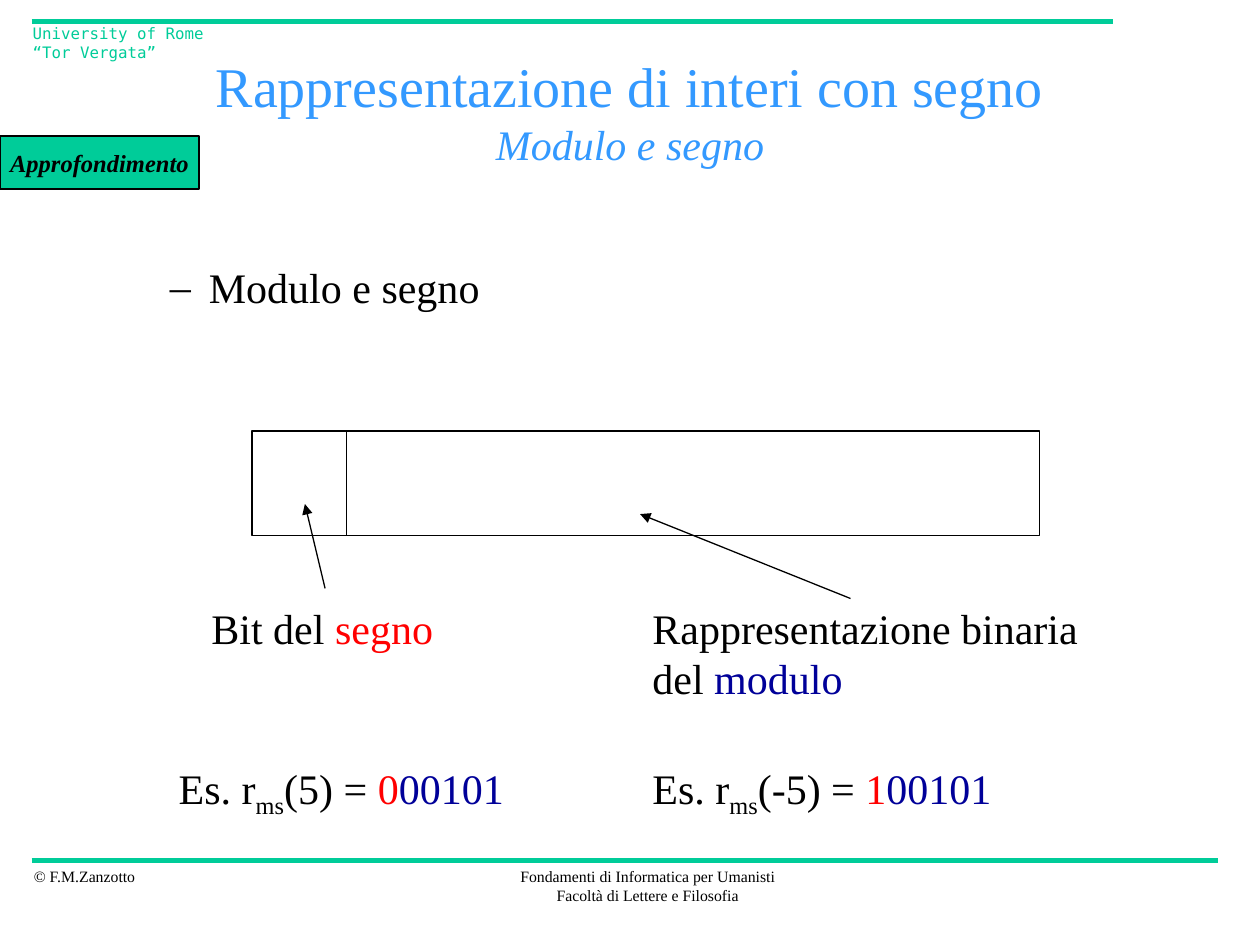
"""Build the slide on sign-and-magnitude representation of integers."""
from lxml.etree import SubElement
from pptx import Presentation
from pptx.dml.color import RGBColor
from pptx.enum.shapes import MSO_CONNECTOR as Connector, MSO_SHAPE as Shape
from pptx.enum.text import MSO_ANCHOR as Anchor, MSO_AUTO_SIZE as AutoSize, PP_ALIGN as Align
from pptx.oxml.ns import qn
from pptx.util import Inches, Pt

COLORS = {"black": "000000", "green": "00CC99", "sky": "3399FF", "red": "FF0000", "navy": "000099"}
SERIF, MONO = "Times New Roman", "DejaVu Sans Mono"


def format_run(run, size, color, font=SERIF):
    run.font.size = Pt(size)
    run.font.name = font
    run.font.color.rgb = RGBColor.from_string(COLORS[color])


def add_text(box, text, size, color="black", font=SERIF, align=Align.LEFT, wrap=False):
    frame = slide.shapes.add_textbox(*map(Inches, box)).text_frame
    frame.word_wrap = wrap
    frame.auto_size = AutoSize.NONE if wrap else AutoSize.SHAPE_TO_FIT_TEXT
    frame.text = text
    for paragraph in frame.paragraphs:
        paragraph.alignment = align
        for run in paragraph.runs:
            format_run(run, size, color, font)
    return frame


presentation = Presentation()
presentation.slide_width, presentation.slide_height = Inches(10), Inches(7.5)
slide = presentation.slides.add_slide(presentation.slide_layouts[6])

add_text((0.17, 6.83, 1.02, 0.25), "© F.M.Zanzotto", 9)
add_text((4.02, 6.83, 2.24, 0.4),
         "Fondamenti di Informatica per Umanisti\nFacoltà di Lettere e Filosofia", 9, align=Align.CENTER)
add_text((0.16, 0.14, 1.71, 0.4), "University of Rome “Tor Vergata”", 9, "green", MONO, wrap=True)

title = add_text((0.75, 0.5, 8.5, 0.75), "Rappresentazione di interi con segno\vModulo e segno",
                 32, "sky", align=Align.CENTER, wrap=True)
title.vertical_anchor = Anchor.MIDDLE
subtitle = title.paragraphs[0].runs[1]
subtitle.font.size = Pt(24)
subtitle.font.italic = True

body = add_text((0.75, 2.03, 8.5, 0.5), "Modulo e segno", 24, wrap=True)
properties = body.paragraphs[0]._p.get_or_add_pPr()
properties.set("marL", str(Inches(0.81)))
properties.set("indent", str(Inches(-0.31)))
SubElement(properties, qn("a:buFont"), typeface=SERIF)
SubElement(properties, qn("a:buChar"), char="–")

word = slide.shapes.add_shape(Shape.RECTANGLE, Inches(2), Inches(3.42), Inches(6.25), Inches(0.83))
badge = slide.shapes.add_shape(Shape.RECTANGLE, Inches(0), Inches(1.08), Inches(1.58), Inches(0.42))
for shape in (word, badge):
    shape.shadow.inherit = False
    shape.line.color.rgb = RGBColor.from_string(COLORS["black"])
    shape.line.width = Pt(0.75)
word.fill.background()
badge.fill.solid()
badge.fill.fore_color.rgb = RGBColor.from_string(COLORS["green"])
badge.text_frame.text = "Approfondimento"
badge.text_frame.word_wrap = False
badge.text_frame.vertical_anchor = Anchor.MIDDLE
badge_paragraph = badge.text_frame.paragraphs[0]
badge_paragraph.alignment = Align.CENTER
badge_run = badge_paragraph.runs[0]
format_run(badge_run, 14, "black")
badge_run.font.bold = badge_run.font.italic = True

lines = [
    ((0.25, 6.83, 9.67, 6.83), "green", 3, False),
    ((0.25, 0.17, 8.83, 0.17), "green", 3, False),
    ((2.75, 3.42, 2.75, 4.25), "black", 0.75, False),
    ((2.58, 4.67, 2.42, 4), "black", 0.75, True),
    ((6.75, 4.75, 5.08, 4.08), "black", 0.75, True),
]
for ends, color, width, has_arrow in lines:
    connector = slide.shapes.add_connector(Connector.STRAIGHT, *map(Inches, ends))
    connector.line.color.rgb = RGBColor.from_string(COLORS[color])
    connector.line.width = Pt(width)
    if has_arrow:
        SubElement(connector.line._get_or_add_ln(), qn("a:tailEnd"), type="triangle")
    SubElement(connector._element.spPr, qn("a:effectLst"))

labels = [
    ((1.58, 4.73, 1.96, 0.5), "Bit del ", [("segno", "red")]),
    ((5.08, 4.73, 3.66, 0.9), "Rappresentazione binaria\ndel ", [("modulo", "navy")]),
]
examples = [(1.32, 2.82, "5", "0"), (5.08, 2.93, "-5", "1")]
for left, width, number, sign in examples:
    pieces = [("ms", "black"), (f"({number}) = ", "black"), (sign, "red"), ("00101", "navy")]
    labels.append(((left, 6, width, 0.5), "Es. r", pieces))
for box, start, pieces in labels:
    paragraph = add_text(box, start, 24).paragraphs[-1]
    for text, color in pieces:
        run = paragraph.add_run()
        run.text = text
        format_run(run, 24, color)
        if text == "ms":
            run.font._element.set("baseline", "-25000")

presentation.save("out.pptx")
